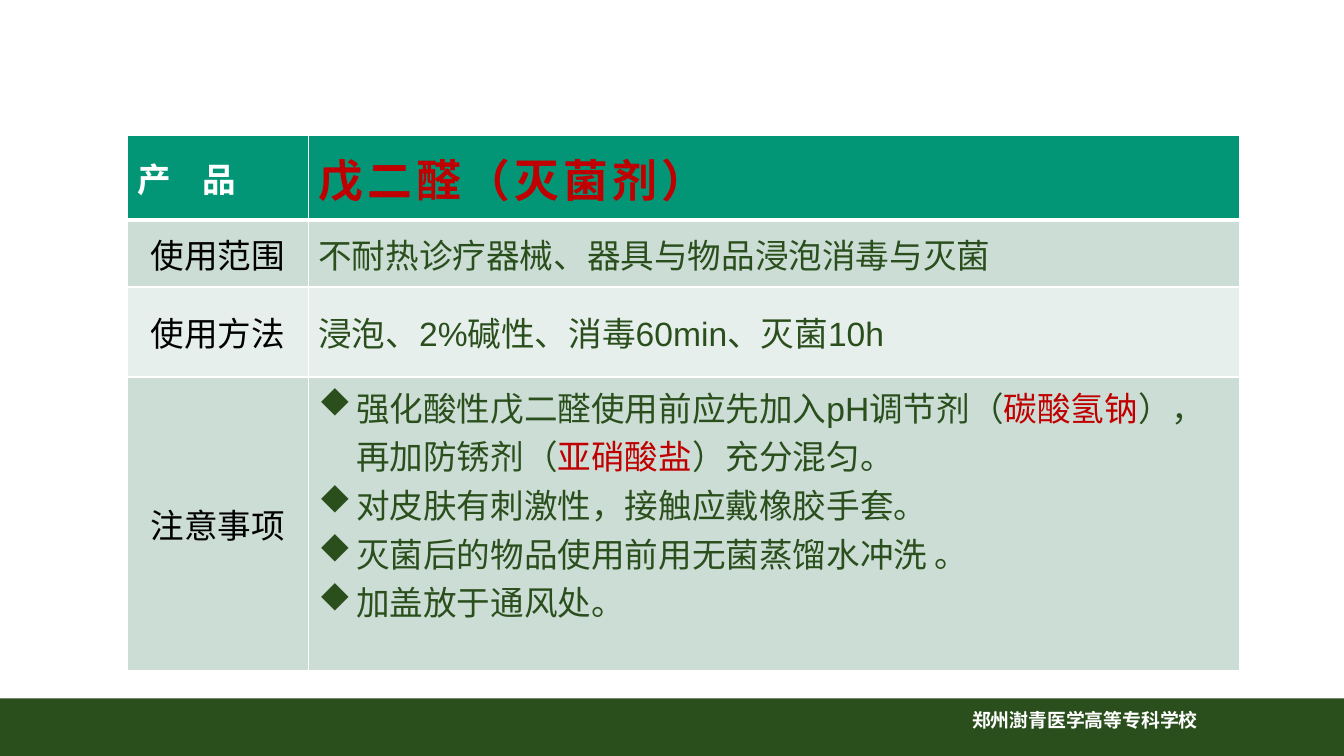
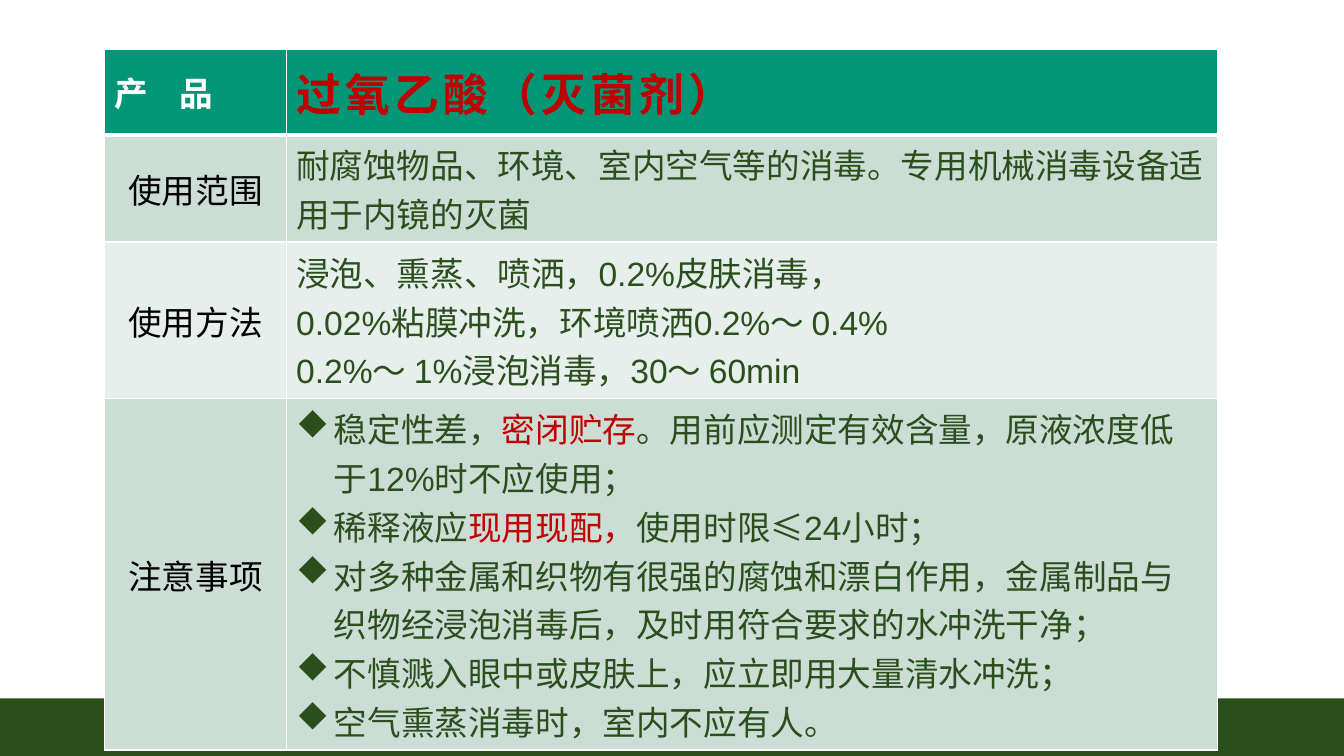
"""Builds two slides with tables on sterilising agents."""
from lxml.etree import SubElement
from pptx import Presentation
from pptx.dml.color import RGBColor
from pptx.enum.shapes import MSO_SHAPE
from pptx.enum.text import MSO_ANCHOR, PP_ALIGN
from pptx.oxml.ns import qn
from pptx.util import Cm, Pt

WHITE = RGBColor(0xFF, 0xFF, 0xFF)
BLACK = RGBColor(0x00, 0x00, 0x00)
RED = RGBColor(0xC0, 0x00, 0x00)
FOREST = RGBColor(0x2A, 0x4F, 0x1C)
TEAL = RGBColor(0x02, 0x96, 0x76)
SAGE = RGBColor(0xCC, 0xDD, 0xD6)
MIST = RGBColor(0xE7, 0xEF, 0xEC)
LATIN, CHINESE = "Arial", "Noto Sans CJK SC"
LABELS = ("使用范围", "使用方法", "注意事项")


def write(paragraph, text, size=24, color=FOREST, bold=False, spacing=0,
          align=PP_ALIGN.LEFT, font=LATIN, bullet=False):
    """Fills a paragraph; parts between bars are red."""
    if bullet:
        props = paragraph._p.get_or_add_pPr()
        props.set("marL", str(Cm(0.95)))
        props.set("indent", str(-Cm(0.95)))
        SubElement(props, qn("a:buFont"), typeface="Wingdings", charset="2")
        SubElement(props, qn("a:buChar"), char="u")
    paragraph.alignment = align
    for position, part in enumerate(text.split("|")):
        run = paragraph.add_run()
        run.text = part
        run.font.name = font
        run.font.size = Pt(size)
        run.font.bold = bold
        run.font.color.rgb = RED if position % 2 else color
        props = run._r.get_or_add_rPr()
        props.set("lang", "zh-CN")
        props.set("spc", str(int(spacing * 100)))
        SubElement(props, qn("a:ea"), typeface=CHINESE)


class Deck:
    """Holds the shared style and the current slide."""

    def __init__(self):
        """Starts a wide presentation."""
        self.presentation = Presentation()
        self.presentation.slide_width = Cm(33.87)
        self.presentation.slide_height = Cm(19.05)
        self.slide = None

    def new_slide(self):
        """Adds a blank slide with the bottom band."""
        self.slide = self.presentation.slides.add_slide(self.presentation.slide_layouts[6])
        band = self.slide.shapes.add_shape(
            MSO_SHAPE.RECTANGLE, 0, Cm(17.6), Cm(33.87), Cm(1.45))
        band.shadow.inherit = False
        band.fill.solid()
        band.fill.fore_color.rgb = FOREST
        band.line.fill.background()

    def school(self, name):
        """Writes the school name on the band."""
        frame = self.slide.shapes.add_textbox(
            Cm(24.25), Cm(17.73), Cm(9.6), Cm(1.17)).text_frame
        frame.word_wrap = True
        write(frame.paragraphs[0], name, size=13.5, color=WHITE, bold=True, font=CHINESE)

    def cell(self, cell, lines, fill, base=1, anchor=MSO_ANCHOR.MIDDLE, **style):
        """Fills and borders a cell and writes its lines."""
        props = cell._tc.get_or_add_tcPr()
        for side, width in (("L", 1), ("R", 1), ("T", 1), ("B", base)):
            line = SubElement(props, qn(f"a:ln{side}"), w=str(Pt(width)))
            SubElement(SubElement(line, qn("a:solidFill")), qn("a:srgbClr"), val=str(WHITE))
        cell.fill.solid()
        cell.fill.fore_color.rgb = fill
        cell.vertical_anchor = anchor
        frame = cell.text_frame
        for number, text in enumerate(lines):
            write(frame.add_paragraph() if number else frame.paragraphs[0], text, **style)

    def product_table(self, left, top, heights, product, scope, method, notes):
        """Adds the table of one product."""
        widths = (4.57, 23.47)
        table = self.slide.shapes.add_table(
            4, 2, Cm(left), Cm(top), Cm(sum(widths)), Cm(sum(heights))).table
        for column, width in zip(table.columns, widths):
            column.width = Cm(width)
        for row, height in zip(table.rows, heights):
            row.height = Cm(height)
        self.cell(table.cell(0, 0), ["产 品"], TEAL, base=3,
                  color=WHITE, bold=True, spacing=8.5)
        self.cell(table.cell(0, 1), [product], TEAL, base=3,
                  size=32, color=RED, bold=True, spacing=3)
        for row, (label, lines) in enumerate(zip(LABELS, (scope, method, notes)), 1):
            fill = SAGE if row % 2 else MIST
            is_notes = lines is notes
            self.cell(table.cell(row, 0), [label], fill, color=BLACK, align=PP_ALIGN.CENTER)
            self.cell(table.cell(row, 1), lines, fill, bullet=is_notes,
                      anchor=MSO_ANCHOR.TOP if is_notes else MSO_ANCHOR.MIDDLE)


def main():
    """Builds and saves the slides."""
    deck = Deck()
    deck.new_slide()
    deck.school("郑州澍青医学高等专科学校")
    deck.product_table(
        3.2, 3.4, (2.15, 1.68, 2.27, 7.4), "戊二醛（灭菌剂）",
        ["不耐热诊疗器械、器具与物品浸泡消毒与灭菌"],
        ["浸泡、2%碱性、消毒60min、灭菌10h"],
        ["强化酸性戊二醛使用前应先加入pH调节剂（|碳酸氢钠|），再加防锈剂（|亚硝酸盐|）充分混匀。",
         "对皮肤有刺激性，接触应戴橡胶手套。",
         "灭菌后的物品使用前用无菌蒸馏水冲洗 。",
         "加盖放于通风处。"])
    deck.new_slide()
    deck.product_table(
        2.64, 1.25, (2.15, 2.7, 3.95, 8.85), "过氧乙酸（灭菌剂）",
        ["耐腐蚀物品、环境、室内空气等的消毒。专用机械消毒设备适用于内镜的灭菌"],
        ["浸泡、熏蒸、喷洒，0.2%皮肤消毒，",
         "0.02%粘膜冲洗，环境喷洒0.2%～ 0.4%",
         "0.2%～ 1%浸泡消毒，30～ 60min"],
        ["稳定性差，|密闭贮存|。用前应测定有效含量，原液浓度低于12%时不应使用；",
         "稀释液应|现用现配，|使用时限≤24小时；",
         "对多种金属和织物有很强的腐蚀和漂白作用，金属制品与织物经浸泡消毒后，及时用符合要求的水冲洗干净；",
         "不慎溅入眼中或皮肤上，应立即用大量清水冲洗；",
         "空气熏蒸消毒时，室内不应有人。"])
    deck.presentation.save("out.pptx")


if __name__ == "__main__":
    main()
